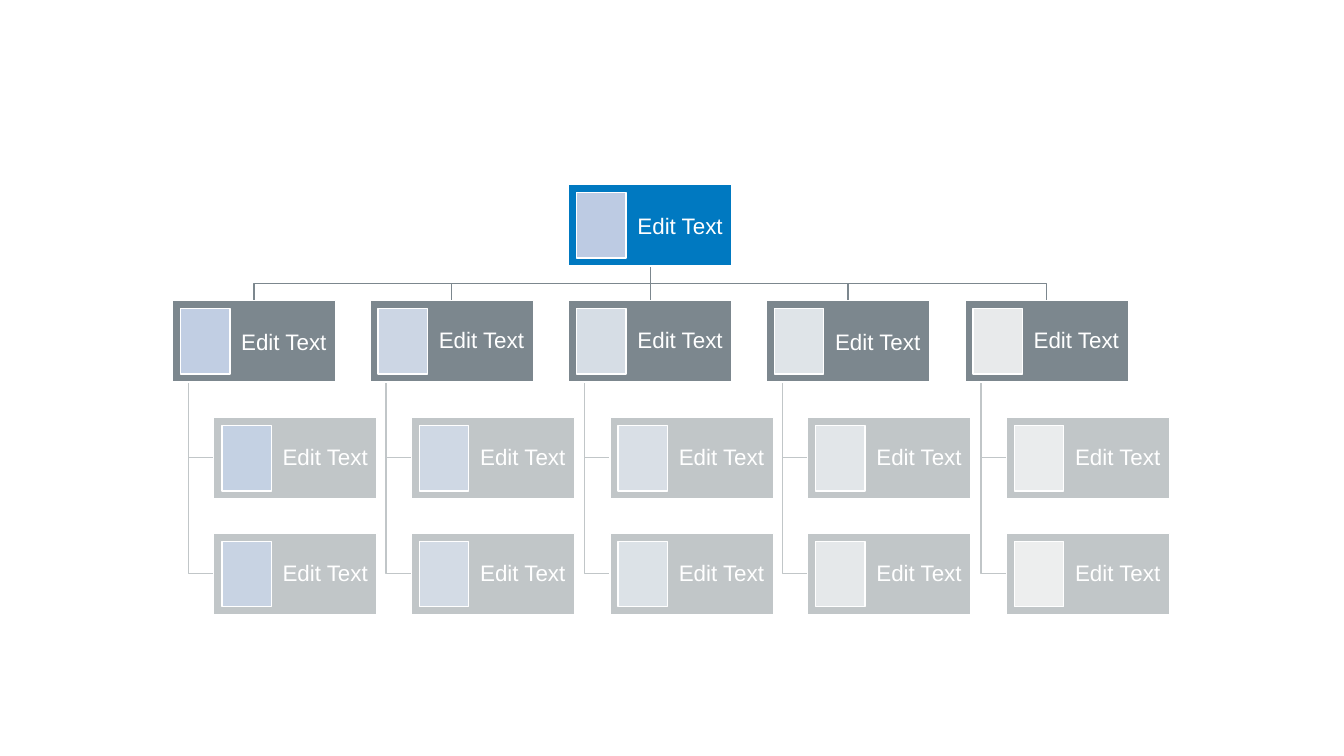
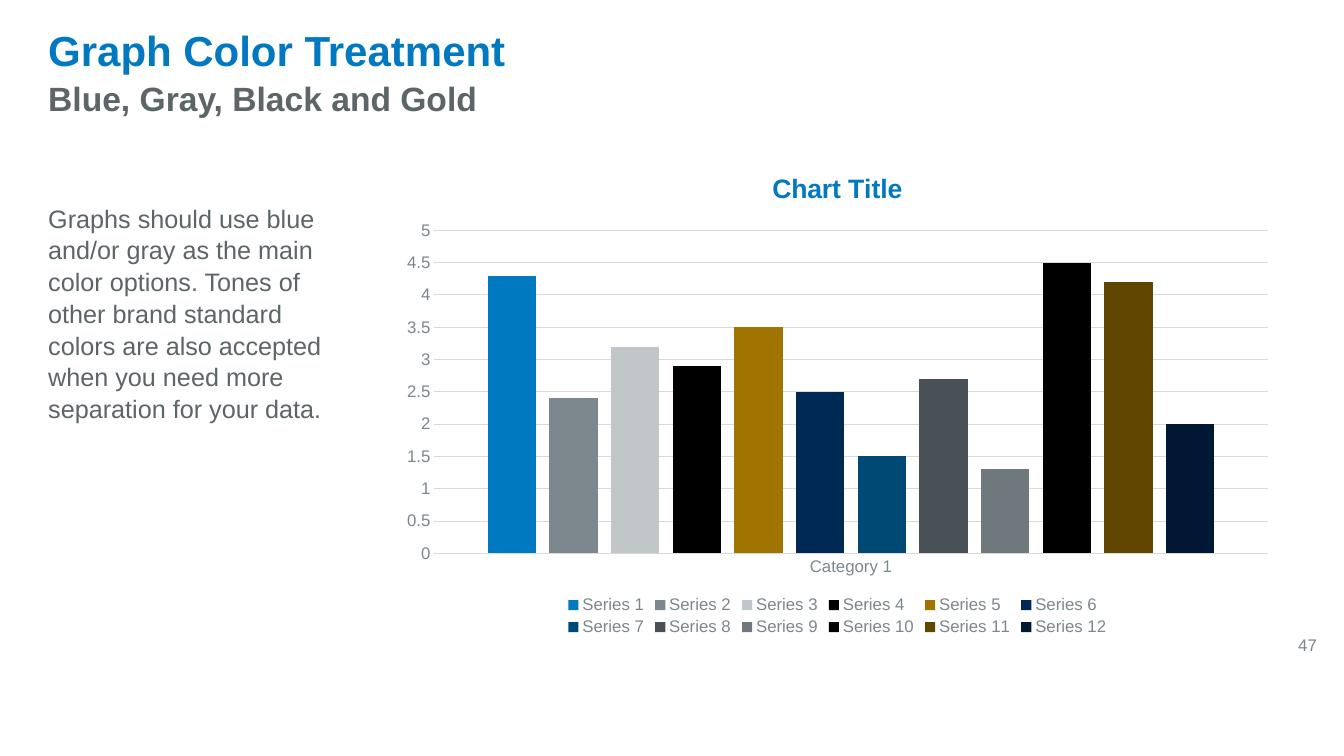
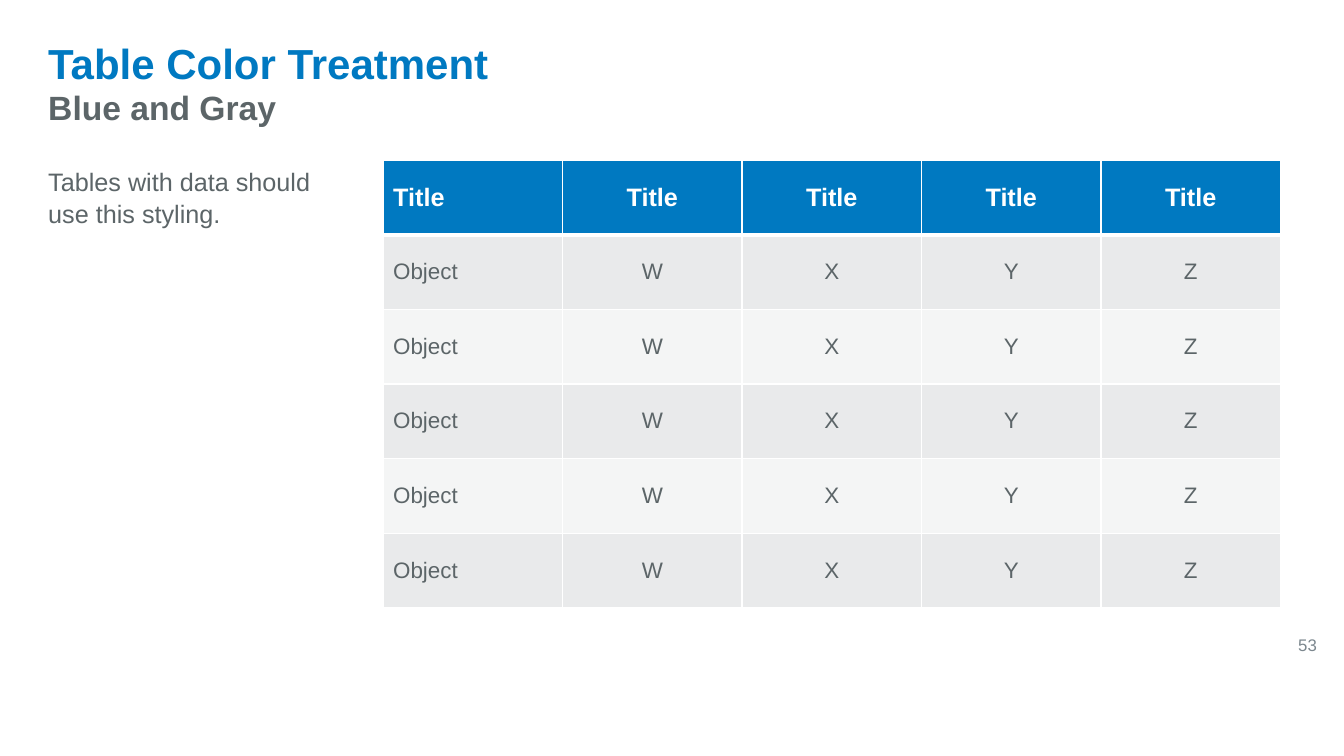
from lxml.etree import SubElement
from pptx import Presentation
from pptx.chart.data import CategoryChartData
from pptx.dml.color import RGBColor
from pptx.enum.chart import XL_CHART_TYPE, XL_LEGEND_POSITION, XL_TICK_MARK
from pptx.enum.shapes import MSO_CONNECTOR, MSO_SHAPE
from pptx.enum.text import MSO_ANCHOR, PP_ALIGN
from pptx.oxml.ns import qn
from pptx.util import Pt

PX = 9144
FONT = "Arial"
BLUE = RGBColor(0x00, 0x79, 0xC1)
GRAY = RGBColor(0x7C, 0x87, 0x8E)
SILVER = RGBColor(0xC1, 0xC6, 0xC8)
SLATE = RGBColor(0x5C, 0x65, 0x68)
WHITE = RGBColor(0xFF, 0xFF, 0xFF)
GRID = RGBColor(0xD9, 0xD9, 0xD9)
ROW_DARK = RGBColor(0xE9, 0xEA, 0xEB)
ROW_LIGHT = RGBColor(0xF4, 0xF5, 0xF5)

CARD_W, CARD_H = 162, 81
ROOT_PORTRAIT = "BDCBE3"
PORTRAITS = [
    ("C1CEE3", "C4D1E3", "C8D3E3"),
    ("CCD6E4", "CFD8E4", "D3DBE5"),
    ("D6DDE5", "D9DFE6", "DCE2E7"),
    ("DFE4E8", "E2E6E9", "E5E8EA"),
    ("E8EAEB", "EAECED", "EDEEEE"),
]
BARS = [
    (4.3, "0079C1"), (2.4, "7C878E"), (3.2, "C1C6C8"), (2.9, "000000"),
    (3.5, "A07400"), (2.5, "002855"), (1.5, "004974"), (2.7, "4A5156"),
    (1.3, "6F797D"), (4.5, "000000"), (4.2, "604600"), (2, "001833"),
]


def px(*lengths):
    """Turn px lengths into EMU."""
    return [n * PX for n in lengths]


def style(font, size, color, bold=False):
    """Set the typeface, size, colour and weight of a font."""
    font.name, font.size, font.bold = FONT, Pt(size), bold
    font.color.rgb = color


def add_text(s, box, text, size, color, bold=False, anchor=MSO_ANCHOR.MIDDLE,
             align=PP_ALIGN.LEFT, spacing=None):
    """Add a wrapped one-paragraph text box."""
    tf = s.shapes.add_textbox(*px(*box)).text_frame
    tf.word_wrap, tf.vertical_anchor = True, anchor
    p = tf.paragraphs[0]
    p.text, p.alignment, p.line_spacing = text, align, spacing
    style(p.font, size, color, bold)


def add_frame(s, title, title_box, subtitle, subtitle_box, body, body_box, number):
    """Add the heading, side text and page number of a content slide."""
    add_text(s, title_box, title, 30, BLUE, bold=True)
    add_text(s, subtitle_box, subtitle, 24, SLATE, bold=True)
    add_text(s, body_box, body, 18, SLATE, anchor=MSO_ANCHOR.TOP, spacing=1.05)
    add_text(s, (1166, 620, 150, 40), number, 12, GRAY, align=PP_ALIGN.RIGHT)


def add_rect(s, box, fill):
    """Add a flat rectangle with a thin white outline."""
    sp = s.shapes.add_shape(MSO_SHAPE.RECTANGLE, *px(*box))
    sp.shadow.inherit = False
    sp.fill.solid()
    sp.fill.fore_color.rgb = fill
    sp.line.color.rgb, sp.line.width = WHITE, Pt(1)
    return sp


def add_card(s, x, y, fill, portrait, spacing=0.9):
    """Add a chart card with its portrait panel and return the card."""
    card = add_rect(s, (x, y, CARD_W, CARD_H), fill)
    tf = card.text_frame
    tf.word_wrap, tf.vertical_anchor = True, MSO_ANCHOR.MIDDLE
    tf.margin_left, tf.margin_top, tf.margin_right, tf.margin_bottom = px(60, 1, 1, 1)
    p = tf.paragraphs[0]
    p.text, p.alignment, p.line_spacing = "Edit Text", PP_ALIGN.CENTER, spacing
    style(p.font, 16, WHITE)
    add_rect(s, (x + 8, y + 8, 49, 65), RGBColor.from_string(portrait))
    return card


def add_elbow(s, color, start, *points):
    """Add an open line with square corners."""
    builder = s.shapes.build_freeform(*start, scale=PX)
    builder.add_line_segments(points, close=False)
    sp = builder.convert_to_shape()
    sp.shadow.inherit = False
    sp.fill.background()
    sp.line.color.rgb, sp.line.width = color, Pt(1)


def add_stem(s, color, x, top, bottom):
    """Add a straight vertical connector."""
    stem = s.shapes.add_connector(MSO_CONNECTOR.STRAIGHT, *px(x, top, x, bottom))
    stem.line.color.rgb, stem.line.width = color, Pt(1)
    SubElement(stem._element.spPr, qn("a:effectLst"))
    return stem


def org_slide(s):
    """Build the organisation chart."""
    columns = [171 + c * 393 // 2 for c in range(len(PORTRAITS))]
    top, *levels = [183 + n * 231 // 2 for n in range(4)]
    middle = len(columns) // 2
    center, bottom = columns[middle] + CARD_W // 2, top + CARD_H
    bus = (bottom + levels[0]) // 2

    for c, x in enumerate(columns):
        for y in levels[1:]:
            mid = y + CARD_H // 2
            add_elbow(s, SILVER, (x + 16, levels[0] + CARD_H), (x + 16, mid), (x + 41, mid))
        if c != middle:
            end = x + CARD_W // 2
            add_elbow(s, GRAY, (center, bottom), (center, bus), (end, bus), (end, levels[0]))
    stem = add_stem(s, GRAY, center, bottom, levels[0])

    root = add_card(s, columns[middle], top, BLUE, ROOT_PORTRAIT, 1)
    managers = []
    for c, (x, portraits) in enumerate(zip(columns, PORTRAITS)):
        spacing = 1 if c in (0, 3) else 0.9
        managers.append(add_card(s, x, levels[0], GRAY, portraits[0], spacing))
        for y, portrait in zip(levels[1:], portraits[1:]):
            add_card(s, x + 41, y, SILVER, portrait)
    stem.begin_connect(root, 2)
    stem.end_connect(managers[middle], 0)


def add_bar_chart(s, box):
    """Add the clustered column chart."""
    data = CategoryChartData()
    data.categories = ["Category 1"]
    for n, (value, _) in enumerate(BARS, 1):
        data.add_series(f"Series {n}", [value])
    chart = s.shapes.add_chart(XL_CHART_TYPE.COLUMN_CLUSTERED, *px(*box), data).chart
    style(chart.font, 12, GRAY)
    chart.has_title = True
    p = chart.chart_title.text_frame.paragraphs[0]
    p.text = "Chart Title"
    style(p.font, 19, BLUE, bold=True)
    chart.chart_title.include_in_layout = False
    chart.has_legend = True
    chart.legend.position = XL_LEGEND_POSITION.BOTTOM
    chart.legend.include_in_layout = False

    plot = chart.plots[0]
    plot.gap_width, plot.overlap, plot.vary_by_categories = 219, -27, False
    for series, (_, color) in zip(plot.series, BARS):
        series.format.fill.solid()
        series.format.fill.fore_color.rgb = RGBColor.from_string(color)

    values = chart.value_axis
    values.minimum_scale, values.maximum_scale, values.major_unit = 0, 5, 0.5
    values.format.line.fill.background()
    for axis in (values, chart.category_axis):
        axis.major_tick_mark = axis.minor_tick_mark = XL_TICK_MARK.NONE
    for line in (values.major_gridlines.format.line, chart.category_axis.format.line):
        line.color.rgb, line.width = GRID, Pt(0.75)


def add_border(cell, side, width):
    """Add a white border to one side of a cell."""
    ln = SubElement(cell._tc.get_or_add_tcPr(), qn(f"a:ln{side}"), w=str(Pt(width)))
    fill = SubElement(ln, qn("a:solidFill"))
    SubElement(fill, qn("a:srgbClr"), val=str(WHITE))


def add_data_table(s, x, y, col_w, row_h, rows):
    """Add a table with a blue header and banded rows."""
    n_rows, n_cols = len(rows), len(rows[0])
    box = px(x, y, col_w * n_cols, row_h * n_rows)
    table = s.shapes.add_table(n_rows, n_cols, *box).table
    for r, row in enumerate(rows):
        header = r == 0
        fill = BLUE if header else ROW_DARK if r % 2 else ROW_LIGHT
        for c, text in enumerate(row):
            cell = table.cell(r, c)
            cell.vertical_anchor = MSO_ANCHOR.MIDDLE
            widths = {"L": 1, "R": 1, "T": 3 if r == 1 else 1, "B": 3 if header else 1}
            for side, width in widths.items():
                add_border(cell, side, width)
            cell.fill.solid()
            cell.fill.fore_color.rgb = fill
            p = cell.text_frame.paragraphs[0]
            p.text = text
            p.alignment = PP_ALIGN.CENTER if c else PP_ALIGN.LEFT
            style(p.font, 18 if header else 16, WHITE if header else SLATE, header)


def chart_slide(s):
    """Build the graph colour slide."""
    add_frame(
        s, "Graph Color Treatment", (38, 19, 1257, 60),
        "Blue, Gray, Black and Gold", (38, 73, 1257, 49),
        "Graphs should use blue and/or gray as the main color options. Tones of other "
        "brand standard colors are also accepted when you need more separation for your data.",
        (38, 195, 303, 448), "47")
    add_bar_chart(s, (386, 150, 889, 485))


def table_slide(s):
    """Build the table colour slide."""
    add_frame(
        s, "Table Color Treatment", (38, 27, 1295, 70),
        "Blue and Gray", (38, 82, 1295, 49),
        "Tables with data should use this styling.", (38, 159, 285, 471), "53")
    rows = [["Title"] * 5] + [["Object", "W", "X", "Y", "Z"]] * 5
    add_data_table(s, 380, 159, 178, 74, rows)


def main():
    """Build the slides and save the file."""
    prs = Presentation()
    prs.slide_width, prs.slide_height = px(1333, 750)
    for build in (org_slide, chart_slide, table_slide):
        build(prs.slides.add_slide(prs.slide_layouts[6]))
    prs.save("out.pptx")


if __name__ == "__main__":
    main()
